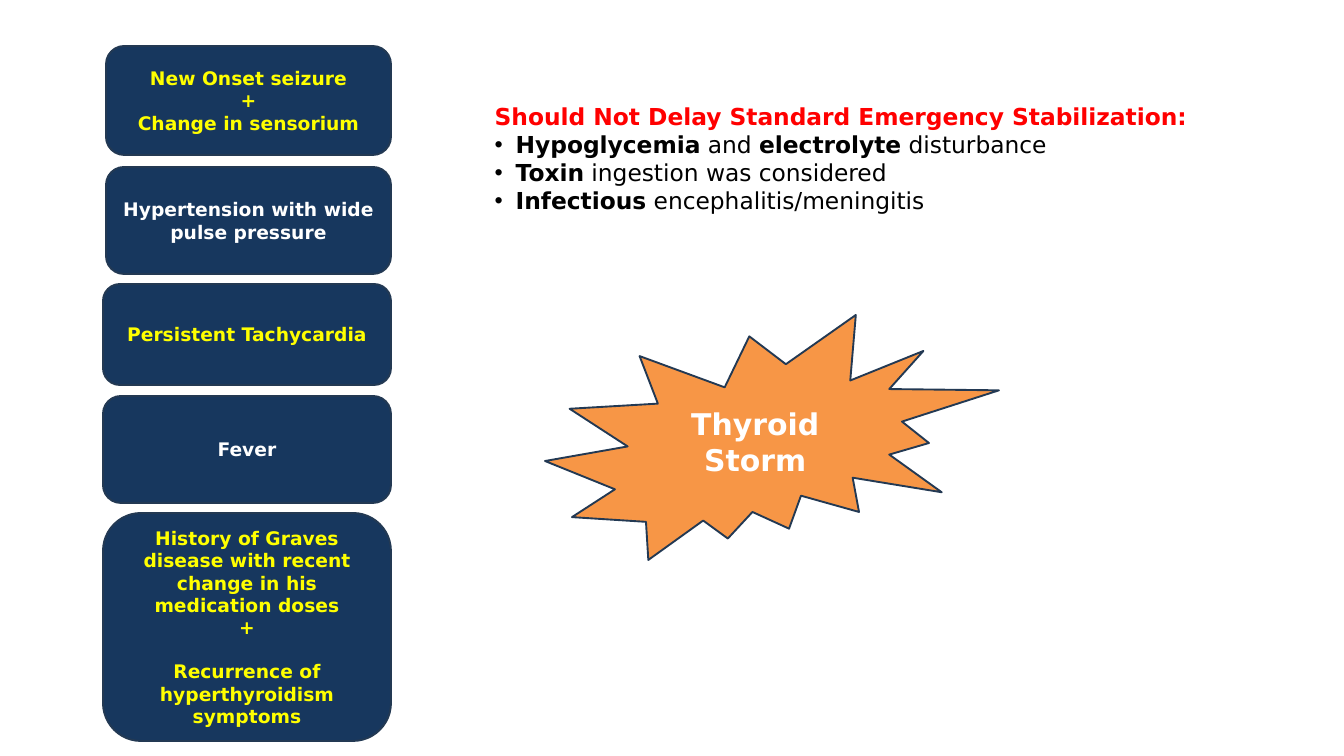
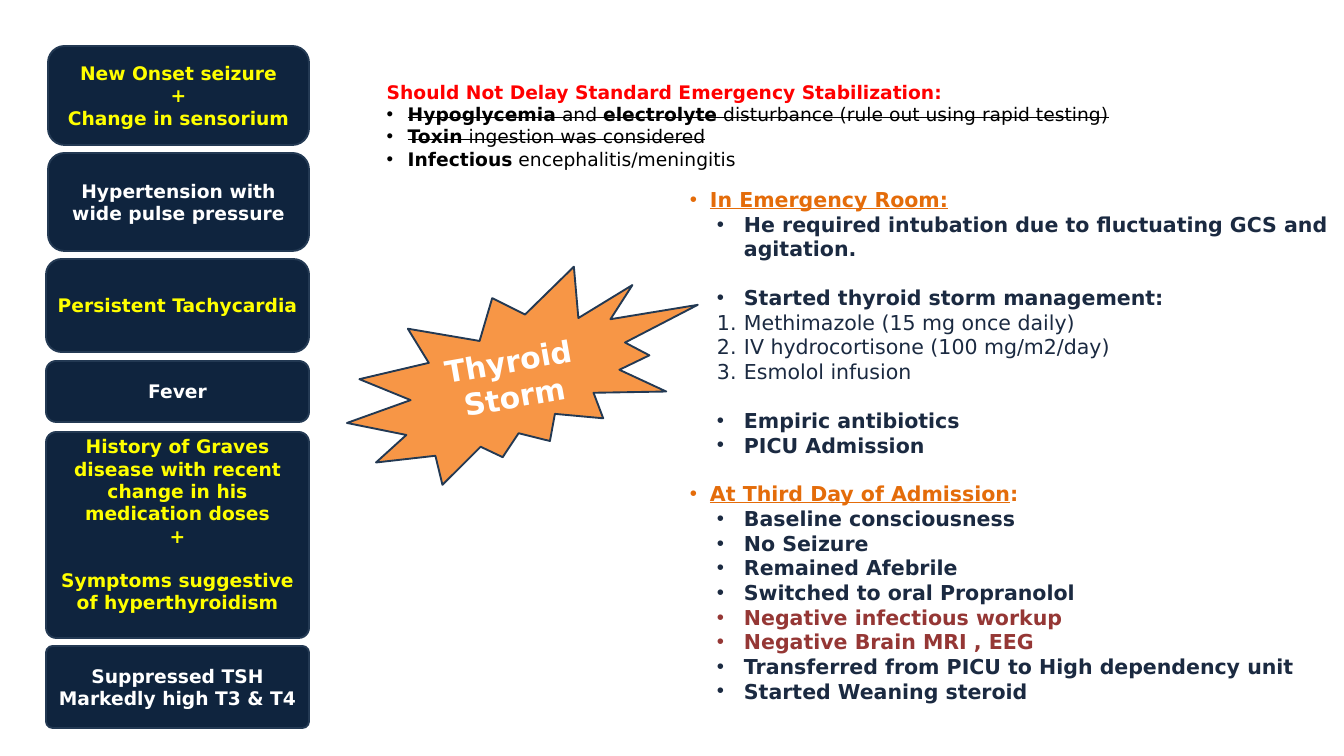
import pptx
import pptx.util
from lxml import etree
from pptx.dml.color import RGBColor
from pptx.enum.shapes import MSO_SHAPE
from pptx.enum.text import MSO_ANCHOR, MSO_AUTO_SIZE, PP_ALIGN
from pptx.oxml.ns import qn

PX = 914400 / 67.2
FONT = "DejaVu Sans"
LINE_EM = 1.164  # height of one text line, in font sizes

WHITE = RGBColor(0xFF, 0xFF, 0xFF)
BLACK = RGBColor(0x00, 0x00, 0x00)
YELLOW = RGBColor(0xFF, 0xFF, 0x00)
RED = RGBColor(0xFF, 0x00, 0x00)
BLUE = RGBColor(0x17, 0x37, 0x5E)
NAVY = RGBColor(0x0F, 0x24, 0x3E)
EDGE = RGBColor(0x23, 0x39, 0x53)
ORANGE = RGBColor(0xF7, 0x96, 0x46)
AMBER = RGBColor(0xE4, 0x6C, 0x0A)
INK = RGBColor(0x1B, 0x2A, 0x41)
MAROON = RGBColor(0x95, 0x37, 0x35)

# Paragraph formats; text between ** marks gets the "mark" attribute.
HEAD = dict(color=RED, bold=True)
ITEM = dict(color=BLACK, bullet="•", left=21, hang=21)
CUT = dict(ITEM, strike=True)
PART = dict(color=AMBER, bold=True, mark="underline", bullet="•", left=20, hang=27)
STEP = dict(color=INK, bold=True, bullet="•", left=54, hang=27, level=1)
DRUG = dict(STEP, bold=False, bullet="1.")
CLEAR = dict(STEP, color=MAROON)
GAP = dict(gap=True)

ALERT = "Should Not Delay Standard Emergency Stabilization:"
SUGAR = "**Hypoglycemia** and **electrolyte** disturbance"
TOXIN = "**Toxin** ingestion was considered"
GERMS = "**Infectious** encephalitis/meningitis"

ONSET = ["New Onset seizure", "+", "Change in sensorium"]
TENSION = ["Hypertension with wide pulse pressure"]
PULSE = ["Persistent Tachycardia"]
FEVER = ["Fever"]
GRAVES = ["History of Graves disease with recent change in his medication doses", "+"]

CHECKS = [(ALERT, HEAD), (SUGAR, ITEM), (TOXIN, ITEM), (GERMS, ITEM)]
RULED = [(ALERT, HEAD), (SUGAR + " (rule out using rapid testing)", CUT),
         (TOXIN, CUT), (GERMS, ITEM)]
COURSE = [
    ("**In Emergency Room:**", PART),
    ("He required intubation due to fluctuating GCS and agitation.", STEP),
    ("Started thyroid storm management:", STEP | GAP),
    ("Methimazole (15 mg once daily)", DRUG),
    ("IV hydrocortisone (100 mg/m2/day)", DRUG),
    ("Esmolol infusion", DRUG),
    ("Empiric antibiotics", STEP | GAP),
    ("PICU Admission", STEP),
    ("**At Third Day of Admission**:", PART | GAP),
    ("Baseline consciousness", STEP),
    ("No Seizure", STEP),
    ("Remained Afebrile", STEP),
    ("Switched to oral Propranolol", STEP),
    ("Negative infectious workup", CLEAR),
    ("Negative Brain MRI , EEG", CLEAR),
    ("Transferred from PICU to High dependency unit", STEP),
    ("Started Weaning steroid", STEP),
]

# Cards: lines, colour, left, top, height, then optional extras.
SLIDES = [
    dict(
        layout=1, fill=BLUE, right=391, seal=(545, 315, 454, 245), turn=0,
        lists=[dict(box=(488, 99, 750, 148), paras=CHECKS, size=25)],
        cards=[
            (ONSET, YELLOW, 106, 46, 109, {}),
            (TENSION, WHITE, 106, 167, 107, {}),
            (PULSE, YELLOW, 103, 284, 101, {}),
            (FEVER, WHITE, 103, 396, 107, {}),
            (GRAVES + [("Recurrence of hyperthyroidism symptoms", GAP)],
             YELLOW, 103, 513, 228, {}),
        ]),
    dict(
        layout=3, fill=NAVY, right=309, seal=(341, 277, 366, 192), turn=350,
        lists=[dict(box=(380, 77, 750, 97), paras=RULED, size=20),
               dict(box=(690, 187, 658, 597), paras=COURSE, size=22, inset=0)],
        cards=[
            (ONSET, YELLOW, 48, 46, 99, {}),
            (TENSION, WHITE, 48, 153, 98, {}),
            (PULSE, YELLOW, 46, 259, 93, {}),
            (FEVER, WHITE, 46, 361, 61, {}),
            (GRAVES + [("Symptoms suggestive of hyperthyroidism", GAP)],
             YELLOW, 46, 432, 206, dict(bend=0.05, foot=25)),
            (["Suppressed TSH", "Markedly high T3 & T4"],
             WHITE, 46, 646, 82, dict(bend=0.08)),
        ]),
]


def px(num):
    return pptx.util.Emu(round(num * PX))


def write(para, text, size=20, color=WHITE, bold=False, mark="bold", strike=False,
          bullet=None, left=0, hang=0, level=0, gap=False, align=PP_ALIGN.LEFT):
    para.alignment = align
    para.level = level
    para.space_before = pptx.util.Pt(round(size * LINE_EM) if gap else 0)
    props = para._p.get_or_add_pPr()
    props.set("marL", str(px(left)))
    props.set("indent", str(px(-hang)))
    if bullet == "1.":
        etree.SubElement(props, qn("a:buAutoNum"), type="arabicPeriod")
    elif bullet:
        etree.SubElement(props, qn("a:buFont"), typeface="Arial")
        etree.SubElement(props, qn("a:buChar"), char=bullet)
    else:
        etree.SubElement(props, qn("a:buNone"))
    for num, part in enumerate(text.split("**")):
        if not part:
            continue
        run = para.add_run()
        run.text = part
        font = run.font
        font.name, font.size, font.bold = FONT, pptx.util.Pt(size), bold
        font.color.rgb = color
        if num % 2:
            setattr(font, mark, True)
        if strike:
            run._r.get_or_add_rPr().set("strike", "sngStrike")


def fill_text(frame, paras, **base):
    """Write strings or (text, format) pairs, one paragraph each."""
    frame.word_wrap = True
    frame.auto_size = MSO_AUTO_SIZE.NONE
    for num, item in enumerate(paras):
        text, form = (item, {}) if isinstance(item, str) else item
        para = frame.add_paragraph() if num else frame.paragraphs[0]
        write(para, text, **(base | form))


def add_form(slide, kind, box, fill, paras, **form):
    shape = slide.shapes.add_shape(kind, *map(px, box))
    shape.shadow.inherit = False
    shape.fill.solid()
    shape.fill.fore_color.rgb = fill
    shape.line.color.rgb = EDGE
    shape.line.width = pptx.util.Pt(2)
    shape.text_frame.vertical_anchor = MSO_ANCHOR.MIDDLE
    fill_text(shape.text_frame, paras, bold=True, align=PP_ALIGN.CENTER, **form)
    return shape


def set_list(body, box, paras, size, inset=None):
    body.left, body.top, body.width, body.height = map(px, box)
    frame = body.text_frame
    frame.vertical_anchor = MSO_ANCHOR.TOP
    if inset is not None:
        frame.margin_left = frame.margin_right = px(inset)
        frame.margin_top = frame.margin_bottom = px(inset)
    fill_text(frame, paras, size=size)


def add_card(slide, fill, right, lines, color, left, top, height, bend=None, foot=None):
    box = left, top, right - left, height
    card = add_form(slide, MSO_SHAPE.ROUNDED_RECTANGLE, box, fill, lines, color=color)
    if bend:
        card.adjustments[0] = bend
    if foot:
        card.text_frame.margin_bottom = px(foot)


def build(deck, data):
    slide = deck.slides.add_slide(deck.slide_layouts[data["layout"]])
    title, *bodies = slide.placeholders
    title._element.getparent().remove(title._element)
    for body, part in zip(bodies, data["lists"]):
        set_list(body, **part)
    for *card, extra in data["cards"]:
        add_card(slide, data["fill"], data["right"], *card, **extra)
    seal = add_form(slide, MSO_SHAPE.EXPLOSION2, data["seal"], ORANGE,
                    ["Thyroid Storm"], size=32)
    seal.rotation = data["turn"]


def main():
    deck = pptx.Presentation()
    deck.slide_width, deck.slide_height = px(1344), px(756)
    for data in SLIDES:
        build(deck, data)
    deck.save("out.pptx")


if __name__ == "__main__":
    main()
